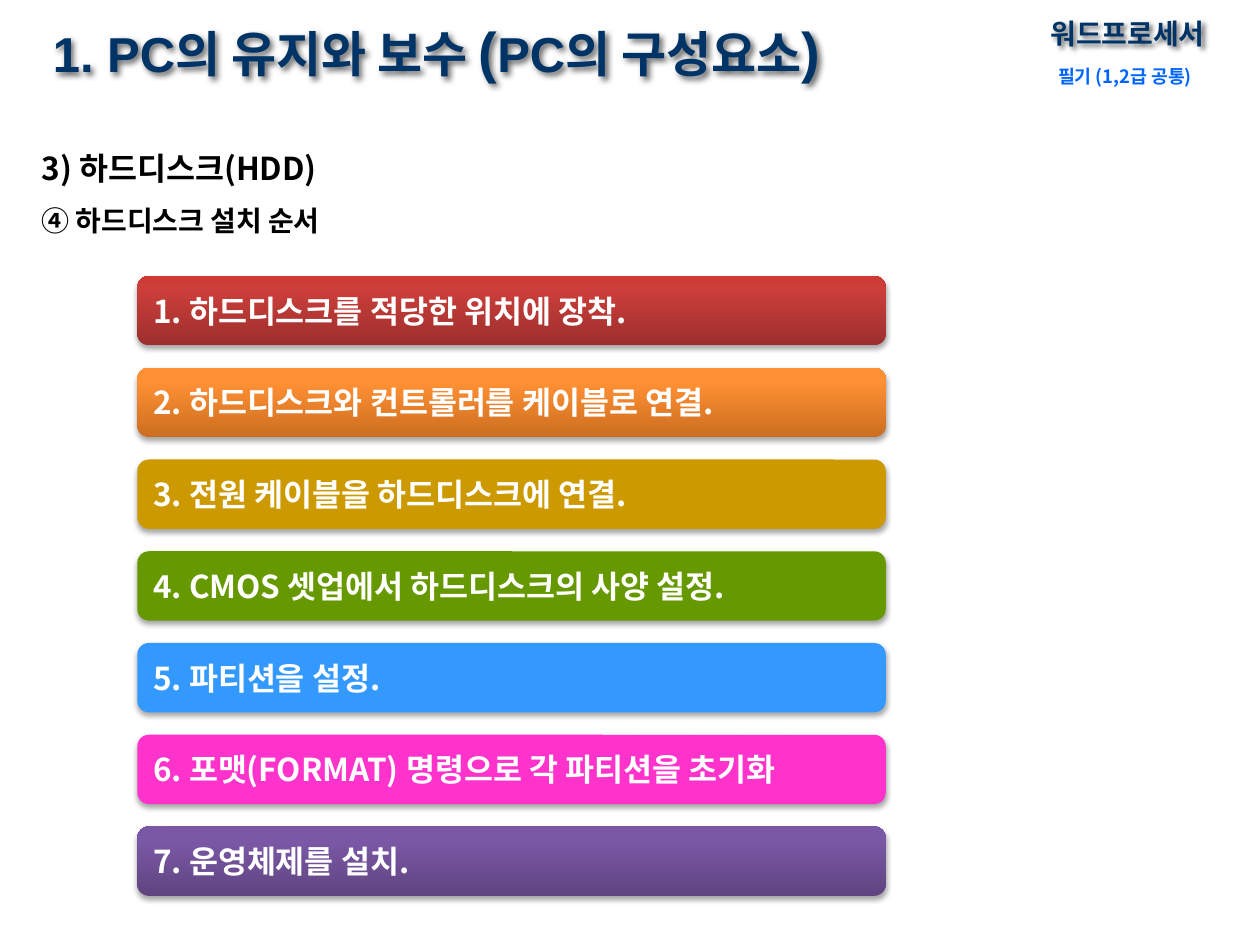
"""Build the hard disk installation slide: headings and seven coloured step bars."""
from dataclasses import dataclass
from typing import Any

from lxml import etree
from pptx import Presentation
from pptx import util as u
from pptx.dml.color import RGBColor
from pptx.enum import shapes, text
from pptx.oxml.ns import qn


@dataclass(frozen=True)
class Theme:
    """Colours, fonts and type sizes of the slide."""
    navy: str = "003366"
    blue: str = "0066FF"
    black: str = "000000"
    white: str = "FFFFFF"
    latin: str = "Arial"
    korean: str = "Noto Sans CJK KR"
    bracket: float = 32
    title: float = 28
    heading: float = 18
    subheading: float = 16
    course: float = 16
    level: float = 10.5


@dataclass(frozen=True)
class Step:
    """One installation step with its solid colour or gradient colours."""
    label: str
    colors: tuple[str, ...]


@dataclass(frozen=True)
class Shadow:
    """An outer shadow in points, degrees and percent."""
    blur: float
    dist: float
    angle: int
    alpha: int


THEME = Theme()
BAR_SHADOW = Shadow(3.1, 1.8, 90, 35)
TEXT_SHADOW = Shadow(3, 2, 45, 60)
STOPS = (0, 80, 100)
FIRST_TOP, LAST_TOP = 2.19, 6.56
STEPS = (
    Step("1. 하드디스크를 적당한 위치에 장착.", ("9C2F2D", "CB3E3A", "CE3B37")),
    Step("2. 하드디스크와 컨트롤러를 케이블로 연결.", ("CC6E20", "FF9034", "FF9136")),
    Step("3. 전원 케이블을 하드디스크에 연결.", ("CC9900",)),
    Step("4. CMOS 셋업에서 하드디스크의 사양 설정.", ("669900",)),
    Step("5. 파티션을 설정.", ("3399FF",)),
    Step("6. 포맷(FORMAT) 명령으로 각 파티션을 초기화", ("FF33CC",)),
    Step("7. 운영체제를 설치.", ("5F4480", "7B58A6", "7C57A8")),
)


def add_run(p: Any, content: str, *, size: float, color: str,
            font: str = THEME.korean) -> None:
    """Add bold text to a paragraph."""
    r = p.add_run()
    r.text = content
    r.font.size = u.Pt(size)
    r.font.bold = True
    r.font.name = font
    r.font.color.rgb = RGBColor.from_string(color)
    ea = etree.SubElement(r.font._element, qn("a:ea"))
    ea.set("typeface", THEME.korean)


def place(sp: Any, left: float, top: float, width: float, height: float) -> None:
    """Move and size a shape in inches."""
    sp.left, sp.top = u.Inches(left), u.Inches(top)
    sp.width, sp.height = u.Inches(width), u.Inches(height)


def add_shadow(sp: Any, shadow: Shadow) -> None:
    """Give a shape a soft black outer shadow."""
    sp.shadow.inherit = False
    effects = sp._element.spPr.find(qn("a:effectLst"))
    outer = etree.SubElement(
        effects, qn("a:outerShdw"), blurRad=str(u.Pt(shadow.blur)),
        dist=str(u.Pt(shadow.dist)), dir=str(shadow.angle * 60000), rotWithShape="0")
    color = etree.SubElement(outer, qn("a:srgbClr"), val=THEME.black)
    etree.SubElement(color, qn("a:alpha"), val=str(shadow.alpha * 1000))


def fill_bar(sp: Any, colors: tuple[str, ...]) -> None:
    """Fill a bar with one colour or an upward gradient."""
    if len(colors) == 1:
        sp.fill.solid()
        sp.fill.fore_color.rgb = RGBColor.from_string(colors[0])
        return
    sp.fill.gradient()
    sp.fill.gradient_angle = 90
    stops = sp._element.spPr.find(".//" + qn("a:gsLst"))
    for old in list(stops):
        stops.remove(old)
    for position, color in zip(STOPS, colors):
        stop = etree.SubElement(stops, qn("a:gs"), pos=str(position * 1000))
        etree.SubElement(stop, qn("a:srgbClr"), val=color)


def add_step(slide: Any, step: Step, top: float) -> None:
    """Draw one step bar."""
    sp = slide.shapes.add_shape(shapes.MSO_SHAPE.ROUNDED_RECTANGLE, 0, 0, 0, 0)
    place(sp, 1.09, top, 5.94, 0.55)
    fill_bar(sp, step.colors)
    sp.line.fill.background()
    add_shadow(sp, BAR_SHADOW)
    tf = sp.text_frame
    tf.vertical_anchor = text.MSO_ANCHOR.MIDDLE
    p = tf.paragraphs[0]
    p.alignment = text.PP_ALIGN.LEFT
    add_run(p, step.label, size=THEME.heading, color=THEME.white)


def add_label(slide: Any, content: str, box: tuple[float, float, float, float], *,
              size: float, color: str) -> Any:
    """Add a one-line text box."""
    sp = slide.shapes.add_textbox(0, 0, 0, 0)
    place(sp, *box)
    sp.text_frame.word_wrap = True
    add_run(sp.text_frame.paragraphs[0], content, size=size, color=color)
    return sp


def set_title(sp: Any) -> None:
    """Format and fill the title placeholder."""
    place(sp, 0.16, 0.01, 8.12, 0.77)
    add_shadow(sp, TEXT_SHADOW)
    tf = sp.text_frame
    tf.auto_size = text.MSO_AUTO_SIZE.NONE
    tf.vertical_anchor = text.MSO_ANCHOR.MIDDLE
    tf.margin_left = u.Inches(0.26)
    p = tf.paragraphs[0]
    p.alignment = text.PP_ALIGN.LEFT
    for content, size in (("1. PC의 유지와 보수 ", THEME.title), ("(", THEME.bracket),
                          ("PC의 구성요소", THEME.title), (")", THEME.bracket)):
        add_run(p, content, size=size, color=THEME.navy, font=THEME.latin)


def set_headings(sp: Any) -> None:
    """Format and fill the body placeholder."""
    place(sp, 0.23, 0.98, 9.53, 1.15)
    tf = sp.text_frame
    tf.auto_size = text.MSO_AUTO_SIZE.NONE
    tf.vertical_anchor = text.MSO_ANCHOR.TOP
    lines = (("3) 하드디스크(HDD)", THEME.heading),
             ("④ 하드디스크 설치 순서", THEME.subheading))
    for i, (content, size) in enumerate(lines):
        p = tf.add_paragraph() if i else tf.paragraphs[0]
        props = p._p.get_or_add_pPr()
        props.set("marL", str(u.Inches(0.5)))
        props.set("indent", str(u.Inches(-0.5)))
        etree.SubElement(props, qn("a:buNone"))
        p.line_spacing = 1.5
        p.space_before = u.Pt(0)
        add_run(p, content, size=size, color=THEME.black)


def main() -> None:
    """Build and save the slide."""
    prs = Presentation()
    prs.slide_width, prs.slide_height = u.Inches(10), u.Inches(7.5)
    slide = prs.slides.add_slide(prs.slide_layouts[1])
    course = add_label(slide, "워드프로세서", (8.24, 0.08, 1.6, 0.37),
                       size=THEME.course, color=THEME.navy)
    add_shadow(course, TEXT_SHADOW)
    add_label(slide, "필기 (1,2급 공통)", (8.3, 0.47, 1.45, 0.28),
              size=THEME.level, color=THEME.blue)
    set_title(slide.shapes.title)
    set_headings(slide.placeholders[1])
    pitch = (LAST_TOP - FIRST_TOP) / (len(STEPS) - 1)
    for i, step in enumerate(STEPS):
        add_step(slide, step, FIRST_TOP + i * pitch)
    prs.save("out.pptx")


if __name__ == "__main__":
    main()
